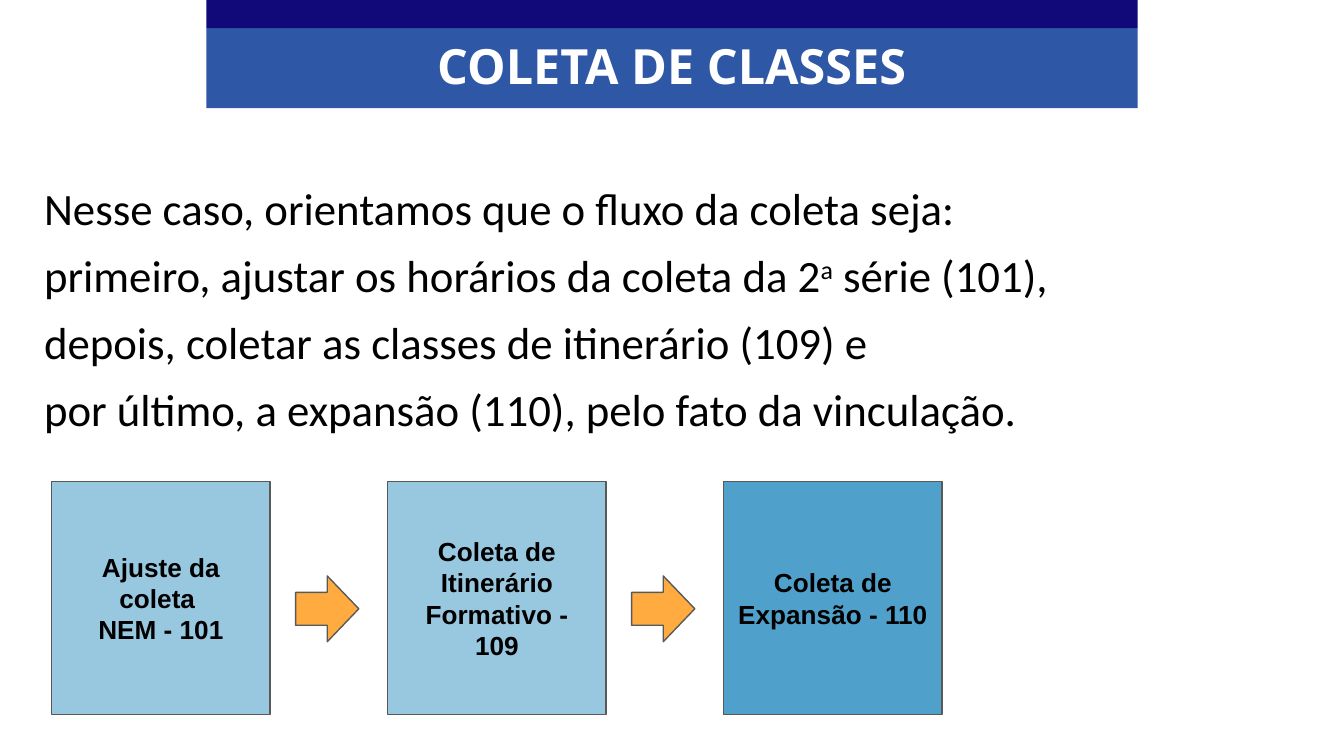
from lxml.etree import SubElement
from pptx import Presentation
from pptx.dml.color import RGBColor
from pptx.enum.shapes import MSO_SHAPE
from pptx.enum.text import MSO_ANCHOR, MSO_AUTO_SIZE, PP_ALIGN
from pptx.oxml.ns import qn
from pptx.util import Pt

PX = 4572  # 200 px to the inch

BLACK = RGBColor(0x00, 0x00, 0x00)
WHITE = RGBColor(0xFF, 0xFF, 0xFF)
NAVY = RGBColor(0x11, 0x09, 0x79)
BLUE = RGBColor(0x2E, 0x58, 0xA6)
STEP_BLUE = RGBColor(0x4F, 0xA0, 0xCA)
ORANGE = RGBColor(0xFF, 0xAB, 0x40)
GRAY = RGBColor(0x59, 0x59, 0x59)


def add_block(kind, left, top, width, height, fill, line=None):
    shape = slide.shapes.add_shape(kind, left * PX, top * PX, width * PX, height * PX)
    shape.shadow.inherit = False
    shape.fill.solid()
    shape.fill.fore_color.rgb = fill
    if line is None:
        shape.line.fill.background()
    else:
        shape.line.color.rgb = line
        shape.line.width = Pt(0.75)
    return shape


def add_run(paragraph, text, font_name, size, color, bold=False):
    run = paragraph.add_run()
    run.text = text
    run.font.name = font_name
    run.font.size = Pt(size)
    run.font.color.rgb = color
    run.font.bold = bold
    return run


presentation = Presentation()
presentation.slide_width = 2000 * PX
presentation.slide_height = 1125 * PX
slide = presentation.slides.add_slide(presentation.slide_layouts[6])

# Instructions
instructions = [
    [("Nesse caso, orientamos que o fluxo da coleta seja:", False)],
    [("primeiro, ajustar os horários da coleta da 2", False), ("a", True),
     (" série (101),", False)],
    [("depois, coletar as classes de itinerário (109) e", False)],
    [("por último, a expansão (110), pelo fato da vinculação.", False)],
]
body = slide.shapes.add_textbox(-54 * PX, 258 * PX, 1974 * PX, 416 * PX)
frame = body.text_frame
frame.word_wrap = True
frame.auto_size = MSO_AUTO_SIZE.SHAPE_TO_FIT_TEXT
frame.margin_left = frame.margin_right = frame.margin_top = frame.margin_bottom = 20 * PX
for index, pieces in enumerate(instructions):
    paragraph = frame.add_paragraph() if index else frame.paragraphs[0]
    paragraph.line_spacing = 0.9
    paragraph.space_before = Pt(10)
    properties = paragraph._p.get_or_add_pPr()
    properties.set("marL", "0")
    properties.set("indent", str(100 * PX))
    for text, raised in pieces:
        run = add_run(paragraph, text, "Calibri", 24, BLACK)
        if raised:
            run._r.get_or_add_rPr().set("baseline", "30000")

# Steps, with an arrow after each but the last
steps = [
    (["Ajuste da coleta ", "NEM - 101"], 58),
    (["Coleta de Itinerário Formativo - 109"], 58),
    (["Coleta de Expansão - 110"], 100),
]
STEP_LEFT, STEP_PITCH = 77, 500
for index, (lines, opacity) in enumerate(steps):
    left = STEP_LEFT + index * STEP_PITCH
    step = add_block(MSO_SHAPE.RECTANGLE, left, 717, 325, 346, STEP_BLUE, GRAY)
    if opacity < 100:
        color = step._element.spPr.find(qn("a:solidFill")).find(qn("a:srgbClr"))
        SubElement(color, qn("a:alpha")).set("val", str(opacity * 1000))
    frame = step.text_frame
    frame.word_wrap = True
    frame.vertical_anchor = MSO_ANCHOR.MIDDLE
    frame.margin_left = frame.margin_right = frame.margin_top = frame.margin_bottom = 20 * PX
    paragraph = frame.paragraphs[0]
    paragraph.alignment = PP_ALIGN.CENTER
    for line_index, text in enumerate(lines):
        if line_index:
            paragraph.add_line_break()
        add_run(paragraph, text, "Arial", 14, BLACK, bold=True)
    if index < len(steps) - 1:
        add_block(MSO_SHAPE.RIGHT_ARROW, left + 363, 857, 94, 98, ORANGE, GRAY)

# Title banner
add_block(MSO_SHAPE.RECTANGLE, 307, 42, 1386, 119, BLUE)
add_block(MSO_SHAPE.RECTANGLE, 307, 0, 1386, 42, NAVY)
title = slide.shapes.add_textbox(307 * PX, 44 * PX, 1386 * PX, 108 * PX)
frame = title.text_frame
frame.word_wrap = True
frame.auto_size = MSO_AUTO_SIZE.SHAPE_TO_FIT_TEXT
frame.margin_left = frame.margin_right = 20 * PX
frame.margin_top = frame.margin_bottom = 10 * PX
paragraph = frame.paragraphs[0]
paragraph.alignment = PP_ALIGN.CENTER
add_run(paragraph, "COLETA DE CLASSES", "Open Sans", 26, WHITE, bold=True)

presentation.save("out.pptx")
